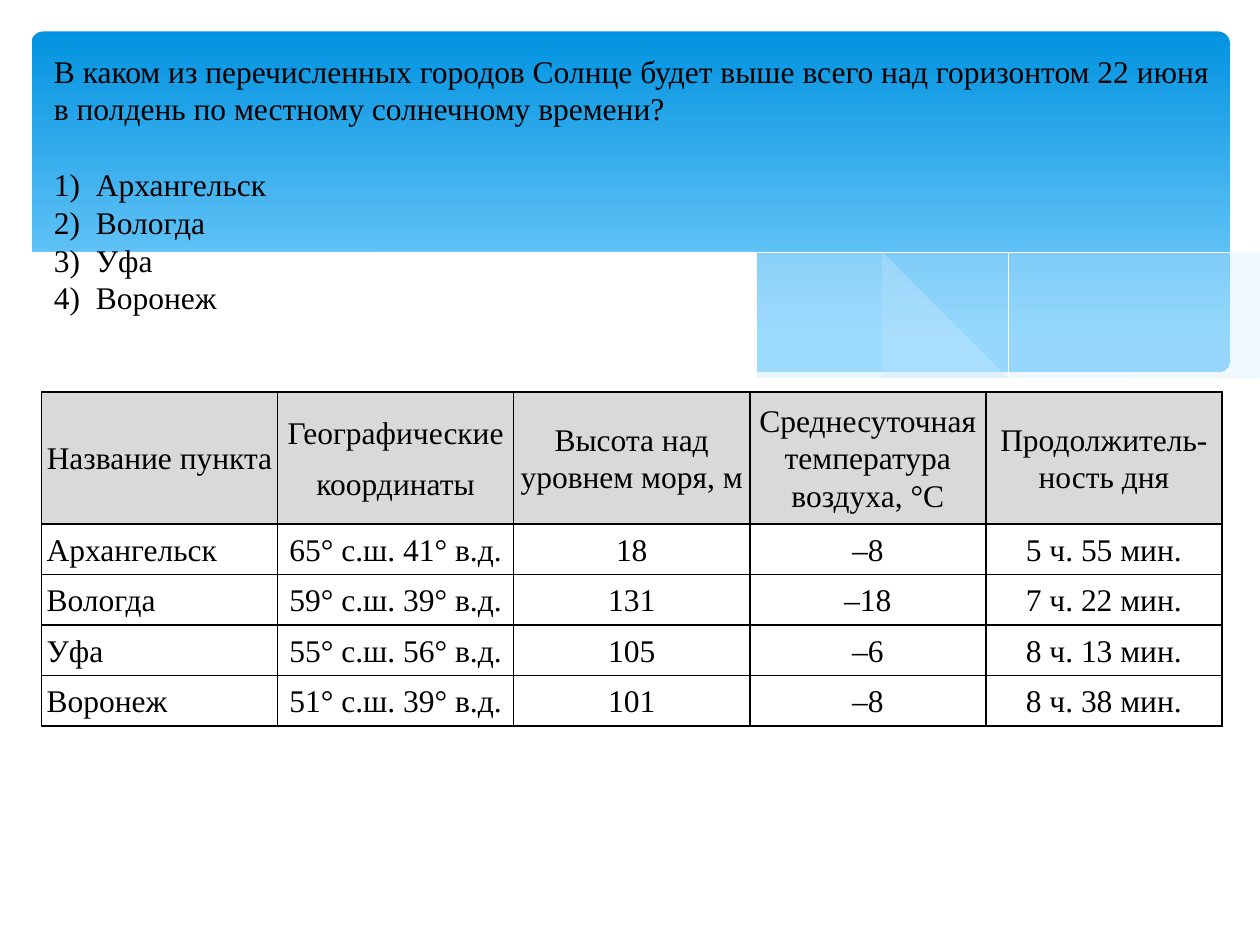
from lxml import etree
from pptx import Presentation
from pptx import util as u
from pptx.dml.color import RGBColor
from pptx.enum import shapes, text
from pptx.oxml import ns

BLACK = RGBColor(0, 0, 0)
WHITE = RGBColor(255, 255, 255)
SKY_TOP = RGBColor(0x02, 0x93, 0xE0)
SKY_BOTTOM = RGBColor(0x83, 0xD3, 0xFE)
MIST = RGBColor(0xC6, 0xE7, 0xFC)
HEAD_GREY = RGBColor(0xD9, 0xD9, 0xD9)
FONT, SIZE = "Times New Roman", u.Pt(18)
WIDTH, HEIGHT = u.Inches(10), u.Inches(7.5)
LEFT, CONTENT_WIDTH = u.Inches(0.33), u.Inches(9.37)
HEAD_ROW, BODY_ROW = u.Inches(1.05), u.Inches(0.4)

QUESTION = ("В каком из перечисленных городов Солнце будет выше всего над горизонтом "
            "22 июня в полдень по местному солнечному времени?")
CITIES = ["Архангельск", "Вологда", "Уфа", "Воронеж"]
HEADINGS = ["Название пункта", "Географические\nкоординаты", "Высота над уровнем моря, м",
            "Среднесуточная температура воздуха, °С", "Продолжитель-\vность дня"]
FACTS = [
    ["65° с.ш. 41° в.д.", "18", "–8", "5 ч. 55 мин."],
    ["59° с.ш. 39° в.д.", "131", "–18", "7 ч. 22 мин."],
    ["55° с.ш. 56° в.д.", "105", "–6", "8 ч. 13 мин."],
    ["51° с.ш. 39° в.д.", "101", "–8", "8 ч. 38 мин."],
]

RIGHT_MIST = [
    [(9.76, 2), (9.21, 2.1), (8.61, 2.23), (7.79, 2.42), (7.06, 2.57), (6.61, 2.65)],
    [(6.61, 2.65), (7.19, 2.72), (7.69, 2.77), (8.14, 2.78), (8.63, 2.75),
     (9.05, 2.69), (9.42, 2.59), (9.76, 2.47)],
]
CENTRE_MIST = [
    [(8.93, 2.73), (8.07, 2.6), (7.06, 2.4), (6.29, 2.22), (5.69, 2.08), (5.14, 1.98),
     (4.65, 1.91), (4.2, 1.87), (3.8, 1.85), (3.28, 1.87), (2.86, 1.91)],
    [(2.86, 1.91), (3.42, 1.99), (4.04, 2.11), (4.49, 2.22), (5.3, 2.4), (6.01, 2.55),
     (6.65, 2.66), (7.22, 2.74), (7.73, 2.77), (8.18, 2.78), (8.57, 2.77), (8.93, 2.73)],
]
FALLING_LINE = [(3.09, 1.95), (3.44, 1.9), (3.87, 1.87), (4.33, 1.87), (4.89, 1.9),
                (5.56, 1.97), (6.36, 2.08), (7.27, 2.26), (8.31, 2.51), (9.07, 2.72)]
RISING_LINE = [(6.13, 2.57), (6.95, 2.35), (7.76, 2.16), (8.66, 1.99), (9.24, 1.9), (9.75, 1.85)]
WHITE_WAVE = [
    [(9.77, 2.46), (9.4, 2.59), (8.99, 2.69), (8.5, 2.75), (8.09, 2.77), (7.61, 2.75),
     (7.08, 2.7), (6.48, 2.62), (5.79, 2.5), (5.03, 2.33), (4.47, 2.2), (3.91, 2.07),
     (3.4, 1.97), (2.92, 1.9), (2.5, 1.86), (2.11, 1.84), (1.61, 1.84), (1.19, 1.87),
     (0.85, 1.93), (0.52, 2.01), (0.23, 2.13)],
    [(0.23, 3.29), (9.77, 3.29)],
]


def smooth(points, steps=5):
    padded = [points[0], *points, points[-1]]
    curve = [points[0]]
    for a, b, c, d in zip(padded, padded[1:], padded[2:], padded[3:]):
        for t in (i / steps for i in range(1, steps + 1)):
            curve.append(tuple(
                0.5 * (2 * q + (r - p) * t + (2 * p - 5 * q + 4 * r - s) * t ** 2
                       + (3 * q - p - 3 * r + s) * t ** 3)
                for p, q, r, s in zip(a, b, c, d)))
    return curve


def add_curve(slide, edges, closed):
    points = [point for edge in edges for point in smooth(edge)]
    builder = slide.shapes.build_freeform(*points[0], scale=u.Inches(1))
    builder.add_line_segments(points[1:], close=closed)
    s = builder.convert_to_shape()
    s.shadow.inherit = False
    return s


def add_wave(slide, edges, color, opacity=100):
    s = add_curve(slide, edges, True)
    s.fill.solid()
    s.fill.fore_color.rgb = color
    s.line.fill.background()
    if opacity < 100:
        clr = s.fill._xPr.find(".//" + ns.qn("a:srgbClr"))
        etree.SubElement(clr, ns.qn("a:alpha"), val=str(opacity * 1000))


def add_crest(slide, points):
    s = add_curve(slide, [points], False)
    s.fill.background()
    s.line.color.rgb = WHITE
    s.line.width = u.Pt(0.5)


def add_sky(slide):
    margin = int(WIDTH * 0.025)
    s = slide.shapes.add_shape(shapes.MSO_SHAPE.ROUNDED_RECTANGLE, margin, margin,
                               int(WIDTH * 0.951), int(HEIGHT * 0.36))
    s.adjustments[0] = 0.034
    s.shadow.inherit = False
    s.line.fill.background()
    s.fill.gradient()
    s.fill.gradient_angle = 270
    for stop, color, position in zip(s.fill.gradient_stops, (SKY_TOP, SKY_BOTTOM), (0, 0.9)):
        stop.color.rgb = color
        stop.position = position


def style_text(tf):
    for p in tf.paragraphs:
        for r in p.runs:
            r.font.name, r.font.size = FONT, SIZE
            r.font.color.rgb = BLACK


def add_question(slide):
    box = slide.shapes.add_textbox(LEFT, u.Inches(0.36), CONTENT_WIDTH, u.Inches(2.22))
    tf = box.text_frame
    tf.word_wrap = True
    answers = [f"{i})  {city}" for i, city in enumerate(CITIES, 1)]
    tf.text = "\n".join([QUESTION, *answers])
    tf.paragraphs[1].space_before = u.Pt(21.6)
    style_text(tf)


def set_borders(cell):
    props = cell._tc.get_or_add_tcPr()
    for i, side in enumerate(("lnL", "lnR", "lnT", "lnB")):
        ln = etree.Element(ns.qn(f"a:{side}"), w=str(u.Pt(1)))
        fill = etree.SubElement(ln, ns.qn("a:solidFill"))
        etree.SubElement(fill, ns.qn("a:srgbClr"), val=str(BLACK))
        props.insert(i, ln)


def fill_cell(cell, words, is_head, is_name):
    cell.text = words
    cell.vertical_anchor = text.MSO_ANCHOR.MIDDLE
    cell.margin_left = cell.margin_right = u.Inches(0.04)
    cell.margin_top = cell.margin_bottom = u.Inches(0.04)
    for p in cell.text_frame.paragraphs:
        p.line_spacing = 1.07
        p.alignment = text.PP_ALIGN.LEFT if is_name else text.PP_ALIGN.CENTER
    first = cell.text_frame.paragraphs[0]
    if is_head:
        first.space_after = u.Pt(8)
        cell.fill.solid()
        cell.fill.fore_color.rgb = HEAD_GREY
    else:
        first.space_before = u.Pt(3.8)
        cell.fill.background()
    style_text(cell.text_frame)
    set_borders(cell)


def add_city_table(slide):
    rows = [HEADINGS] + [[city, *facts] for city, facts in zip(CITIES, FACTS)]
    frame = slide.shapes.add_table(len(rows), len(HEADINGS), LEFT, u.Inches(3.11),
                                   CONTENT_WIDTH, HEAD_ROW + BODY_ROW * len(CITIES))
    table = frame.table
    table.first_row = table.horz_banding = False
    for i, row in enumerate(rows):
        table.rows[i].height = BODY_ROW if i else HEAD_ROW
        for j, words in enumerate(row):
            fill_cell(table.cell(i, j), words, i == 0, i > 0 and j == 0)


def main():
    prs = Presentation()
    prs.slide_width, prs.slide_height = WIDTH, HEIGHT
    slide = prs.slides.add_slide(prs.slide_layouts[6])
    add_sky(slide)
    add_wave(slide, RIGHT_MIST, MIST, 29)
    add_wave(slide, CENTRE_MIST, MIST, 40)
    add_crest(slide, FALLING_LINE)
    add_crest(slide, RISING_LINE)
    add_wave(slide, WHITE_WAVE, WHITE)
    add_question(slide)
    add_city_table(slide)
    prs.save("out.pptx")


if __name__ == "__main__":
    main()
